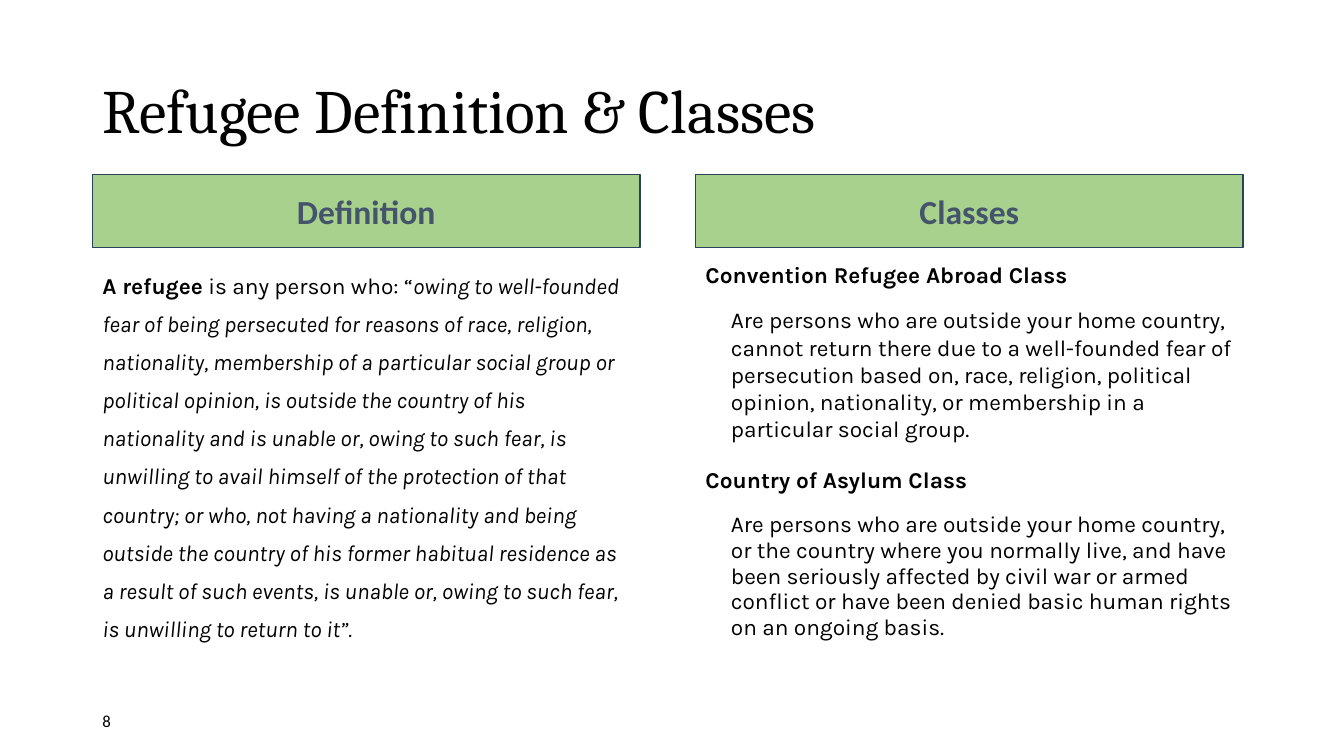
from typing import NamedTuple

from pptx import Presentation
from pptx import util as u
from pptx.dml.color import RGBColor
from pptx.enum import shapes, text

LEFT, RIGHT, WIDE = 2.33, 17.53, 13.8
BLACK, SLATE, GREEN, NAVY = "000000", "44546A", "A9D18E", "28445D"


class Run(NamedTuple):
    words: str
    bold: bool = False
    slant: bool = False


class Para(NamedTuple):
    runs: list[Run]
    line: float = 1.0
    above: float = 0
    below: float = 0
    indent: float = 0


class Panel(NamedTuple):
    left: float
    head: str
    high: float
    paras: list[Para]


PANELS = [
    Panel(LEFT, "Definition", 10.08, [
        Para([
            Run("A refugee", bold=True),
            Run(" is any person who: “"),
            Run("owing to well-founded fear of being persecuted for reasons of race, religion, "
                "nationality, membership of a particular social group or political opinion, is "
                "outside the country of his nationality and is unable or, owing to such fear, is "
                "unwilling to avail himself of the protection of that country; or who, not having "
                "a nationality and being outside the country of his former habitual residence as "
                "a result of such events, is unable or, owing to such fear, is unwilling to "
                "return to it”.", slant=True),
        ], line=1.4),
    ]),
    Panel(RIGHT, "Classes", 10.97, [
        Para([Run("Convention Refugee Abroad Class", bold=True)], below=8),
        Para([Run("Are persons who are outside your home country, cannot return there due to a "
                  "well-founded fear of persecution based on, race, religion, political opinion, "
                  "nationality, or membership in a particular social group.")],
             above=5, below=8, indent=0.64),
        Para([Run("Country of Asylum Class", bold=True)], line=0.95, above=10, below=8),
        Para([Run("Are persons who are outside your home country, or the country where you "
                  "normally live, and have been seriously affected by civil war or armed "
                  "conflict or have been denied basic human rights on an ongoing basis.")],
             line=0.95, above=5, below=8, indent=0.64),
    ]),
]


def color(code: str) -> RGBColor:
    return RGBColor.from_string(code)


def style(font, name: str, size: float, code: str = BLACK, bold: bool = False,
          slant: bool = False) -> None:
    font.name, font.size = name, u.Pt(size)
    font.bold, font.italic = bold, slant
    font.color.rgb = color(code)


def label(frame, words: str, name: str, size: float, code: str = BLACK,
          bold: bool = False, align=text.PP_ALIGN.LEFT) -> None:
    frame.text = words
    frame.word_wrap = True
    frame.auto_size = text.MSO_AUTO_SIZE.NONE
    frame.vertical_anchor = text.MSO_ANCHOR.MIDDLE
    para = frame.paragraphs[0]
    para.alignment = align
    style(para.runs[0].font, name, size, code, bold)


def banner(slide, panel: Panel) -> None:
    box = slide.shapes.add_shape(shapes.MSO_SHAPE.RECTANGLE, u.Cm(panel.left), u.Cm(4.4),
                                 u.Cm(WIDE), u.Cm(1.84))
    box.shadow.inherit = False
    box.fill.solid()
    box.fill.fore_color.rgb = color(GREEN)
    box.line.color.rgb = color(NAVY)
    box.line.width = u.Pt(1)
    label(box.text_frame, panel.head, "Calibri", 24, SLATE, True, text.PP_ALIGN.CENTER)


def body(slide, panel: Panel) -> None:
    box = slide.shapes.add_textbox(u.Cm(panel.left), u.Cm(6.45), u.Cm(WIDE), u.Cm(panel.high))
    frame = box.text_frame
    frame.word_wrap = True
    for i, item in enumerate(panel.paras):
        para = frame.add_paragraph() if i else frame.paragraphs[0]
        para.line_spacing = item.line
        para.space_before, para.space_after = u.Pt(item.above), u.Pt(item.below)
        if item.indent:
            para._p.get_or_add_pPr().set("marL", str(u.Cm(item.indent)))
        for part in item.runs:
            run = para.add_run()
            run.text = part.words
            style(run.font, "Karla", 16.2, bold=part.bold, slant=part.slant)


def main() -> None:
    deck = Presentation()
    deck.slide_width, deck.slide_height = u.Cm(33.87), u.Cm(19.05)
    slide = deck.slides.add_slide(deck.slide_layouts[5])
    title = slide.shapes.title
    title.left, title.top = u.Cm(LEFT), u.Cm(1.01)
    title.width, title.height = u.Cm(29.21), u.Cm(3.68)
    label(title.text_frame, "Refugee Definition & Classes", "Cambria", 44)
    title.text_frame.paragraphs[0].line_spacing = 0.9
    for panel in PANELS:
        body(slide, panel)
        banner(slide, panel)
    page = slide.shapes.add_textbox(u.Cm(LEFT), u.Cm(17.66), u.Cm(7.62), u.Cm(1.01))
    label(page.text_frame, "8", "Calibri", 12)
    deck.save("out.pptx")


if __name__ == "__main__":
    main()
